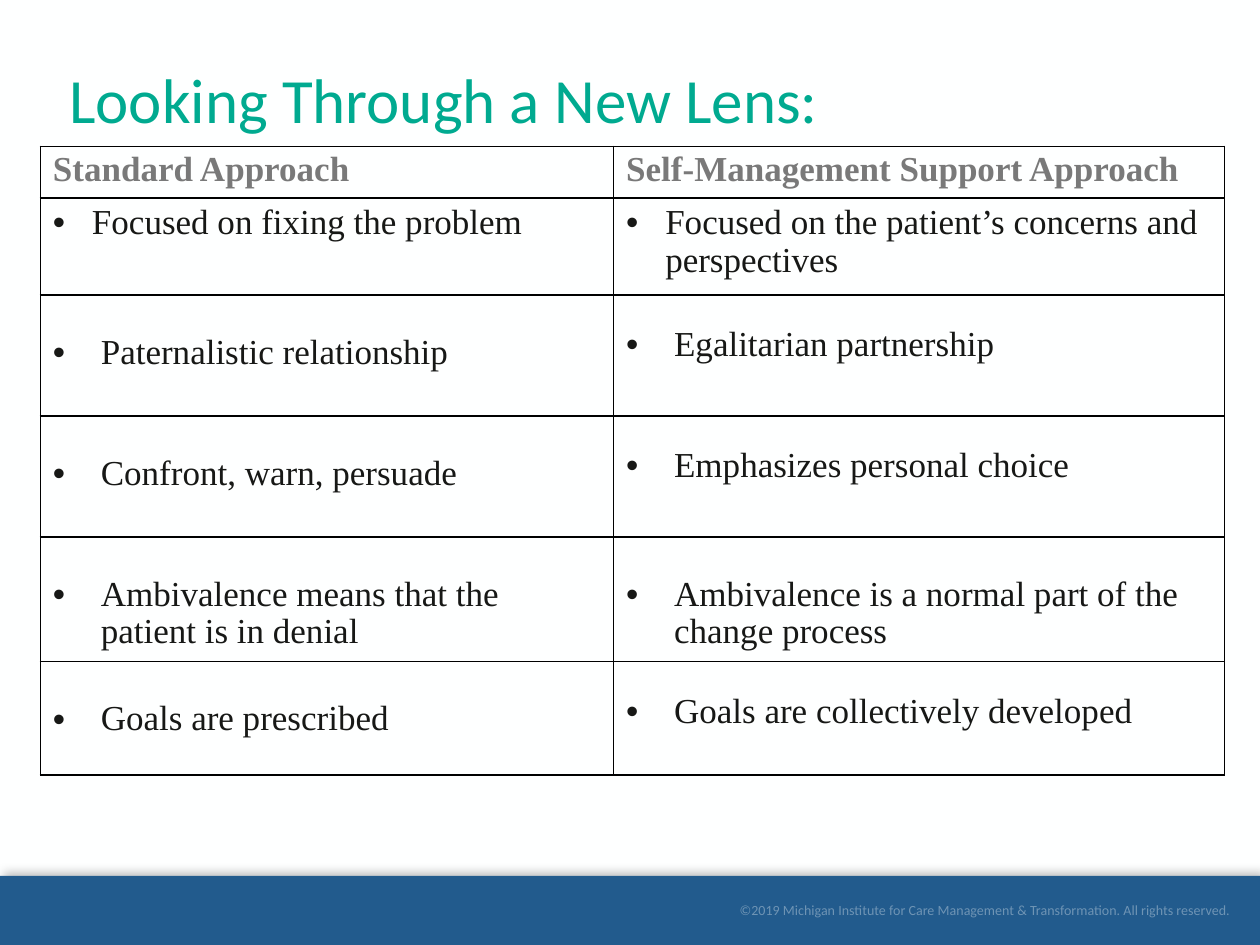
import pptx
import pptx.dml.color
import pptx.enum.shapes
import pptx.enum.text
import pptx.oxml
import pptx.oxml.ns
import pptx.util

WIDTH, HEIGHT = 10, 7.5
SERIF, SANS = "Times New Roman", "Calibri"
WHITE, BLUE, GREEN = "FEFFFF", "225B8D", "00AA90"
GREY, INK, BLACK = "797979", "171816", "000000"

HEADINGS = ["Standard Approach", "Self-Management Support Approach"]
COMPARISONS = [
    ("Focused on fixing the problem",
     "Focused on the patient’s concerns and perspectives"),
    ("Paternalistic relationship", "Egalitarian partnership"),
    ("Confront, warn, persuade", "Emphasizes personal choice"),
    ("Ambivalence means that the patient is in denial",
     "Ambivalence is a normal part of the change process"),
    ("Goals are prescribed", "Goals are collectively developed"),
]
COLUMN_WIDTHS = [4.55, 4.85]
ROW_HEIGHTS = [0.41, 0.77, 0.96, 0.96, 0.99, 0.9]
# Space above the text of each row, left and right
TOP_MARGINS = [(0.04, 0.04), (0.05, 0.05), (0.31, 0.25),
               (0.31, 0.25), (0.31, 0.31), (0.31, 0.25)]


def inches(*lengths):
    return [pptx.util.Inches(length) for length in lengths]


def color(value):
    return pptx.dml.color.RGBColor.from_string(value)


def add_xml(parent, markup):
    tag, rest = markup.split(" ", 1)
    namespaces = pptx.oxml.ns.nsdecls("a")
    parent.append(pptx.oxml.parse_xml(f"{tag} {namespaces} {rest}"))


def add_run(paragraph, text, size, font, value, bold=False):
    run = paragraph.add_run()
    run.text = text
    run.font.size = pptx.util.Pt(size)
    run.font.name = font
    run.font.bold = bold
    run.font.color.rgb = color(value)
    return run


def place_title(slide, box):
    title = slide.shapes.title
    title.left, title.top, title.width, title.height = inches(*box)
    frame = title.text_frame
    frame.word_wrap = True
    frame.vertical_anchor = pptx.enum.text.MSO_ANCHOR.TOP
    frame.paragraphs[0].alignment = pptx.enum.text.PP_ALIGN.LEFT
    add_run(frame.paragraphs[0], "Looking Through a New Lens:", 36, SANS, GREEN)


def place_footer(slide, box):
    left, top, width, height = box
    band = slide.shapes.add_shape(
        pptx.enum.shapes.MSO_SHAPE.RECTANGLE, *inches(*box))
    band.fill.solid()
    band.fill.fore_color.rgb = color(BLUE)
    band.line.fill.background()
    band.shadow.inherit = False
    effects = band._element.spPr.find(pptx.oxml.ns.qn("a:effectLst"))
    add_xml(effects, '<a:outerShdw blurRad="76200" dist="38100" dir="18900000">'
            f'<a:srgbClr val="{BLACK}"><a:alpha val="25000"/></a:srgbClr>'
            '</a:outerShdw>')

    # Copyright line
    notice = slide.shapes.add_textbox(*inches(
        left + width * 0.495, top + height * 0.24, width * 0.482, height * 0.49))
    frame = notice.text_frame
    frame.word_wrap = True
    frame.margin_right = 0
    frame.vertical_anchor = pptx.enum.text.MSO_ANCHOR.MIDDLE
    line = frame.paragraphs[0]
    line.alignment = pptx.enum.text.PP_ALIGN.RIGHT
    run = add_run(line, "©2019 Michigan Institute for Care Management & "
                  "Transformation. All rights reserved.", 8, SANS, WHITE)
    tint = next(run.font._element.iter(pptx.oxml.ns.qn("a:srgbClr")))
    add_xml(tint, '<a:alpha val="35000"/>')


def format_cell(cell, text, top_margin, heading, indent):
    for side in ("lnL", "lnR", "lnT", "lnB"):
        add_xml(cell._tc.get_or_add_tcPr(),
                f'<a:{side} w="12700"><a:solidFill><a:srgbClr val="{BLACK}"/>'
                f'</a:solidFill></a:{side}>')
    cell.fill.background()
    cell.margin_top, cell.margin_bottom = inches(top_margin, 0.02)
    paragraph = cell.text_frame.paragraphs[0]
    properties = paragraph._p.get_or_add_pPr()
    hang = pptx.util.Inches(indent)
    properties.set("marL", str(int(hang)))
    properties.set("indent", str(-int(hang)))
    if not heading:
        add_xml(properties, '<a:buFont typeface="Arial"/>')
        add_xml(properties, '<a:buChar char="•"/>')
    paragraph.line_spacing = 0.97
    add_run(paragraph, text, 20, SERIF, GREY if heading else INK, heading)


def place_comparison(slide, box):
    rows = [HEADINGS, *COMPARISONS]
    table = slide.shapes.add_table(
        len(rows), len(HEADINGS), *inches(*box)).table
    table.first_row = table.horz_banding = False
    for column, width in zip(table.columns, COLUMN_WIDTHS):
        column.width = pptx.util.Inches(width)
    for index, texts in enumerate(rows):
        table.rows[index].height = pptx.util.Inches(ROW_HEIGHTS[index])
        for side, text in enumerate(texts):
            format_cell(table.cell(index, side), text, TOP_MARGINS[index][side],
                        heading=index == 0, indent=0.31 if index == 1 else 0.38)


def main():
    deck = pptx.Presentation()
    deck.slide_width, deck.slide_height = inches(WIDTH, HEIGHT)
    slide = deck.slides.add_slide(deck.slide_layouts[5])
    slide.background.fill.solid()
    slide.background.fill.fore_color.rgb = color(WHITE)

    footer_top = HEIGHT * 0.927
    place_footer(slide, (0, footer_top, WIDTH, HEIGHT - footer_top))
    place_comparison(slide, (WIDTH * 0.032, HEIGHT * 0.155,
                             sum(COLUMN_WIDTHS), sum(ROW_HEIGHTS)))
    place_title(slide, (WIDTH * 0.045, HEIGHT * 0.057,
                        WIDTH * 0.911, HEIGHT * 0.095))
    deck.save("out.pptx")


if __name__ == "__main__":
    main()
